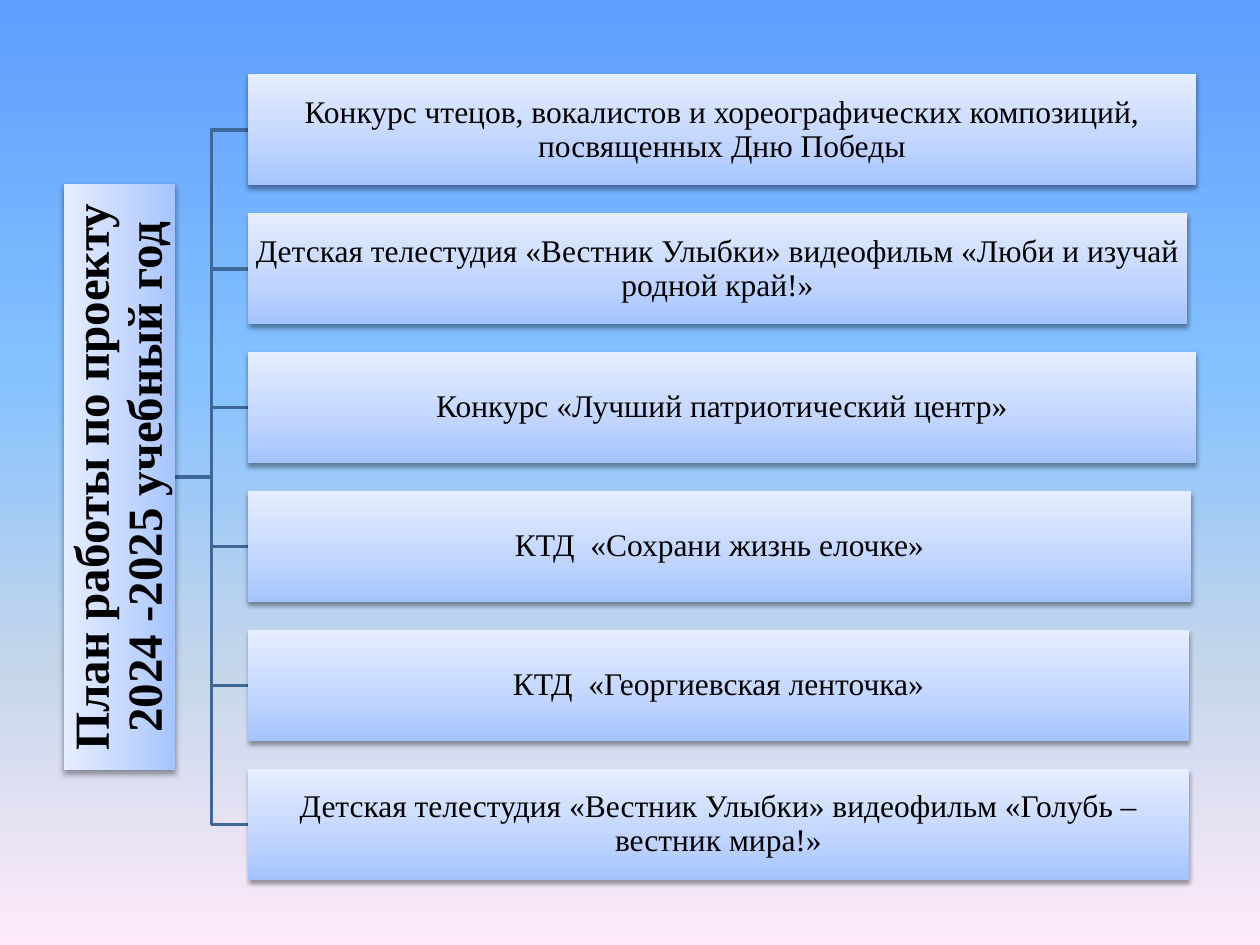
from lxml.etree import SubElement
from pptx import Presentation
from pptx.dml.color import RGBColor
from pptx.enum.shapes import MSO_SHAPE as Shape
from pptx.enum.text import MSO_ANCHOR as Anchor, PP_ALIGN as Align
from pptx.oxml.ns import qn
from pptx.util import Cm, Pt

PLAN = "План работы по проекту 2024 -2025 учебный год"
EVENTS = [
    ("Конкурс чтецов, вокалистов и хореографических композиций, посвященных Дню Победы", 19.11),
    ("Детская телестудия «Вестник Улыбки» видеофильм «Люби и изучай родной край!»", 18.93),
    ("Конкурс «Лучший патриотический центр»", 19.11),
    ("КТД  «Сохрани жизнь елочке»", 19.01),
    ("КТД  «Георгиевская ленточка»", 18.97),
    ("Детская телестудия «Вестник Улыбки» видеофильм «Голубь – вестник мира!»", 18.97),
]

FONT = "Times New Roman"
BLACK = RGBColor(0x00, 0x00, 0x00)
LINE_BLUE = RGBColor(0x3F, 0x67, 0x97)
SKY = [
    (0, RGBColor(0x5E, 0x9E, 0xFF)),
    (40, RGBColor(0x85, 0xC2, 0xFF)),
    (70, RGBColor(0xC4, 0xD6, 0xEB)),
    (100, RGBColor(0xFF, 0xEB, 0xFA)),
]
PANEL = [
    (0, RGBColor(0xA4, 0xC4, 0xFF)),
    (35, RGBColor(0xBF, 0xD4, 0xFF)),
    (100, RGBColor(0xE6, 0xEE, 0xFF)),
]

BOX_LEFT, BOX_TOP, BOX_HEIGHT, PITCH = 5.0, 1.5, 2.24, 2.8
PLAN_LEFT, PLAN_LENGTH = 1.29, 11.82
PLAN_RIGHT = PLAN_LEFT + BOX_HEIGHT
MIDDLE = BOX_TOP + (PITCH * (len(EVENTS) - 1) + BOX_HEIGHT) / 2
TRUNK = (PLAN_RIGHT + BOX_LEFT) / 2


def set_gradient(fill, element, stops, angle):
    fill.gradient()
    gradient = next(element.iter(qn("a:gradFill")))
    for child in list(gradient):
        gradient.remove(child)
    stop_list = SubElement(gradient, qn("a:gsLst"))
    for position, color in stops:
        stop = SubElement(stop_list, qn("a:gs"), pos=str(position * 1000))
        SubElement(stop, qn("a:srgbClr"), val=str(color))
    SubElement(gradient, qn("a:lin"), ang=str(angle * 60000), scaled="0")


def add_shadow(shape):
    shape.shadow.inherit = False
    effects = next(shape._element.iter(qn("a:effectLst")))
    shadow = SubElement(effects, qn("a:outerShdw"), blurRad=str(Pt(3.1)),
                        dist=str(Pt(1.6)), dir="5400000", rotWithShape="0")
    color = SubElement(shadow, qn("a:srgbClr"), val=str(BLACK))
    SubElement(color, qn("a:alpha"), val="38000")


def add_panel(slide, text, left, top, width, size, inset, bold=False):
    shape = slide.shapes.add_shape(
        Shape.RECTANGLE, Cm(left), Cm(top), Cm(width), Cm(BOX_HEIGHT))
    set_gradient(shape.fill, shape._element, PANEL, 270)
    shape.line.fill.background()
    add_shadow(shape)
    frame = shape.text_frame
    frame.text = text
    frame.word_wrap = True
    frame.vertical_anchor = Anchor.MIDDLE
    frame.margin_left = frame.margin_right = Cm(inset)
    frame.margin_top = frame.margin_bottom = Cm(inset)
    paragraph = frame.paragraphs[0]
    paragraph.alignment = Align.CENTER
    paragraph.line_spacing = 0.9
    font = paragraph.runs[0].font
    font.name, font.size, font.bold = FONT, Pt(size), bold
    font.color.rgb = BLACK
    return shape


def add_branch(slide, target):
    builder = slide.shapes.build_freeform(Cm(PLAN_RIGHT), Cm(MIDDLE))
    corners = [(TRUNK, MIDDLE), (TRUNK, target), (BOX_LEFT, target)]
    builder.add_line_segments([(Cm(x), Cm(y)) for x, y in corners], close=False)
    branch = builder.convert_to_shape()
    branch.fill.background()
    branch.line.color.rgb = LINE_BLUE
    branch.line.width = Pt(2)
    branch.shadow.inherit = False


def main():
    presentation = Presentation()
    presentation.slide_width, presentation.slide_height = Cm(25.4), Cm(19.05)
    slide = presentation.slides.add_slide(presentation.slide_layouts[6])
    set_gradient(slide.background.fill, slide._element, SKY, 90)

    tops = [BOX_TOP + PITCH * row for row in range(len(EVENTS))]
    for top in tops:
        add_branch(slide, top + BOX_HEIGHT / 2)

    plan = add_panel(slide, PLAN, PLAN_LEFT + (BOX_HEIGHT - PLAN_LENGTH) / 2,
                     MIDDLE - BOX_HEIGHT / 2, PLAN_LENGTH, 28, 0.05, bold=True)
    plan.rotation = 270

    for top, (text, width) in zip(tops, EVENTS):
        add_panel(slide, text, BOX_LEFT, top, width, 18, 0.03)

    presentation.save("out.pptx")


if __name__ == "__main__":
    main()
